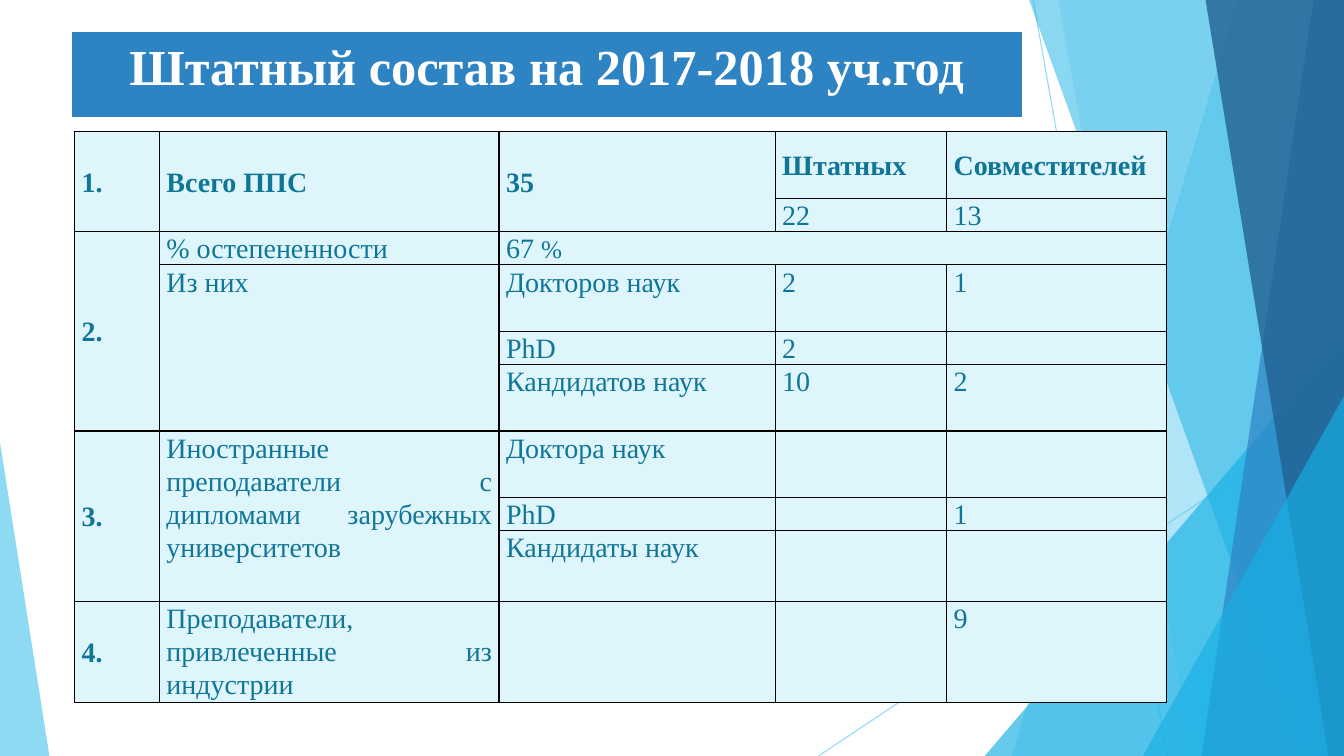
"""Build the slide on teaching staff for the 2017-2018 academic year."""
from lxml import etree
from pptx import Presentation
from pptx.dml.color import RGBColor
from pptx.enum.shapes import MSO_CONNECTOR as CONN, MSO_SHAPE as SHAPE
from pptx.enum.text import MSO_ANCHOR as ANCHOR, MSO_AUTO_SIZE as AUTO, PP_ALIGN as ALIGN
from pptx.oxml.ns import qn
from pptx.util import Pt

W, H = 960, 540
FONT = "Times New Roman"
INK, CELL_FILL, BORDER = "0F7698", "DFF5FC", "000000"
SKY, CYAN, BLUE, NAVY, WHITE = "5FCBEF", "17B0E4", "2E83C3", "226292", "FFFFFF"

TITLE = "Штатный состав на 2017-2018 уч.год"
TITLE_BOX = (50.4, 21.6, 680.4, 63)

TABLE_POS = (53.3, 94.2)
COLS = [60.6, 242.6, 197.3, 122.4, 156.9]
ROWS = [47.5, 23, 23, 47.5, 23, 47.5, 47.5, 23, 50.4, 72]
CELLS = [
    ["1.", "Всего ППС", "35", "Штатных", "Совместителей"],
    ["", "", "", "22", "13"],
    ["2.", "% остепененности", (("67 ", 20), ("%", 18)), "", ""],
    ["", "Из них", "Докторов наук", "2", "1"],
    ["", "", "PhD", "2", ""],
    ["", "", "Кандидатов наук", "10", "2"],
    ["3.", "Иностранные преподаватели с дипломами зарубежных университетов",
     "Доктора наук", "", ""],
    ["", "", "PhD", "", "1"],
    ["", "", "Кандидаты наук", "", ""],
    ["4.", "Преподаватели, привлеченные из индустрии", "", "", "9"],
]
MERGES = [(0, 0, 1, 0), (0, 1, 1, 1), (0, 2, 1, 2), (2, 0, 5, 0),
          (2, 2, 2, 4), (3, 1, 5, 1), (6, 0, 8, 0), (6, 1, 8, 1)]

RAYS = [(738, 0, 833.8, H), (W, 290.2, 584.6, H)]
BANDS_AND_TRIANGLES = [
    ("band", (884.2, 722.9), SKY, 36),
    ("band", (756, 851.8), SKY, 20),
    ("triangle", (703.4, 239.8, 256.6, 300.2, 1), CYAN, 66),
    ("band", (735.1, 929.5), CYAN, 50),
    ("band", (938.2, 858.2), BLUE, 70),
    ("band", (861.1, 949), NAVY, 80),
    ("triangle", (816.5, 283, 143.5, 257, 1), CYAN, 66),
    ("triangle", (0, 316.1, 35.3, 223.9, 0), SKY, 70),
]


def paint(fmt, color, alpha=100):
    """Give a fill a solid colour and opacity."""
    fmt.solid()
    fmt.fore_color.rgb = RGBColor.from_string(color)
    if alpha < 100:
        clr = next(fmt._xPr.iter(qn("a:srgbClr")))
        etree.SubElement(clr, qn("a:alpha"), val=str(alpha * 1000))


def add_run(p, text, size, color, bold):
    """Add one formatted run to a paragraph."""
    r = p.add_run()
    r.text = text
    r.font.name, r.font.size, r.font.bold = FONT, Pt(size), bold
    paint(r.font.fill, color)


def add_ray(s, x1, y1, x2, y2):
    """Draw one thin translucent line."""
    ln = s.shapes.add_connector(CONN.STRAIGHT, Pt(x1), Pt(y1), Pt(x2), Pt(y2))
    ln.line.width = Pt(0.75)
    paint(ln.line.fill, SKY, 70)
    etree.SubElement(ln._element.spPr, qn("a:effectLst"))


def add_decor(s, kind, geometry, color, alpha):
    """Draw one translucent band or triangle."""
    if kind == "band":
        top, bottom = geometry
        fb = s.shapes.build_freeform(Pt(top), 0, scale=1.0)
        fb.add_line_segments([(Pt(W), 0), (Pt(W), Pt(H)), (Pt(bottom), Pt(H))], close=True)
        sp = fb.convert_to_shape()
    else:
        *box, apex = geometry
        sp = s.shapes.add_shape(SHAPE.ISOSCELES_TRIANGLE, *map(Pt, box))
        sp.adjustments[0] = apex
    sp.shadow.inherit = False
    paint(sp.fill, color, alpha)
    sp.line.fill.background()


def add_title(s):
    """Format the title placeholder and bring it in front of the decoration."""
    sp = s.shapes.title
    sp.left, sp.top, sp.width, sp.height = map(Pt, TITLE_BOX)
    paint(sp.fill, BLUE)
    paint(sp.line.fill, WHITE)
    sp.line.width = Pt(2)
    tf = sp.text_frame
    tf.word_wrap, tf.auto_size, tf.vertical_anchor = True, AUTO.NONE, ANCHOR.TOP
    p = tf.paragraphs[0]
    p.alignment = ALIGN.CENTER
    add_run(p, TITLE, 36, WHITE, True)
    s.shapes._spTree.append(sp._element)


def format_cell(cell, content, header):
    """Set borders, fill, margins and text of one cell."""
    tc_pr = cell._tc.get_or_add_tcPr()
    for side in ("lnL", "lnR", "lnT", "lnB"):
        ln = etree.SubElement(tc_pr, qn(f"a:{side}"), w=str(Pt(1)))
        fill = etree.SubElement(ln, qn("a:solidFill"))
        etree.SubElement(fill, qn("a:srgbClr"), val=BORDER)
    paint(cell.fill, CELL_FILL)
    cell.margin_left = cell.margin_right = Pt(5)
    cell.margin_top = cell.margin_bottom = 0
    cell.vertical_anchor = ANCHOR.MIDDLE if header else ANCHOR.TOP
    p = cell.text_frame.paragraphs[0]
    p.alignment, p.line_spacing = ALIGN.JUSTIFY, 1.07
    p.font.size = Pt(18)
    runs = content if isinstance(content, tuple) else ((content, 20),)
    for text, size in runs:
        if text:
            add_run(p, text, size, INK, header)


def add_staff_table(s):
    """Add the staff table with its merged cells."""
    frame = s.shapes.add_table(len(ROWS), len(COLS), *map(Pt, TABLE_POS),
                               Pt(sum(COLS)), Pt(sum(ROWS)))
    tbl = frame.table
    tbl.first_row = tbl.horz_banding = False
    for col, width in zip(tbl.columns, COLS):
        col.width = Pt(width)
    for row, height in zip(tbl.rows, ROWS):
        row.height = Pt(height)
    for i, texts in enumerate(CELLS):
        for j, content in enumerate(texts):
            format_cell(tbl.cell(i, j), content, header=i == 0 or j == 0)
    for top, left, bottom, right in MERGES:
        tbl.cell(top, left).merge(tbl.cell(bottom, right))


def main():
    """Build and save the presentation."""
    prs = Presentation()
    prs.slide_width, prs.slide_height = Pt(W), Pt(H)
    s = prs.slides.add_slide(prs.slide_layouts[5])
    for ray in RAYS:
        add_ray(s, *ray)
    for item in BANDS_AND_TRIANGLES:
        add_decor(s, *item)
    add_title(s)
    add_staff_table(s)
    prs.save("out.pptx")


if __name__ == "__main__":
    main()
